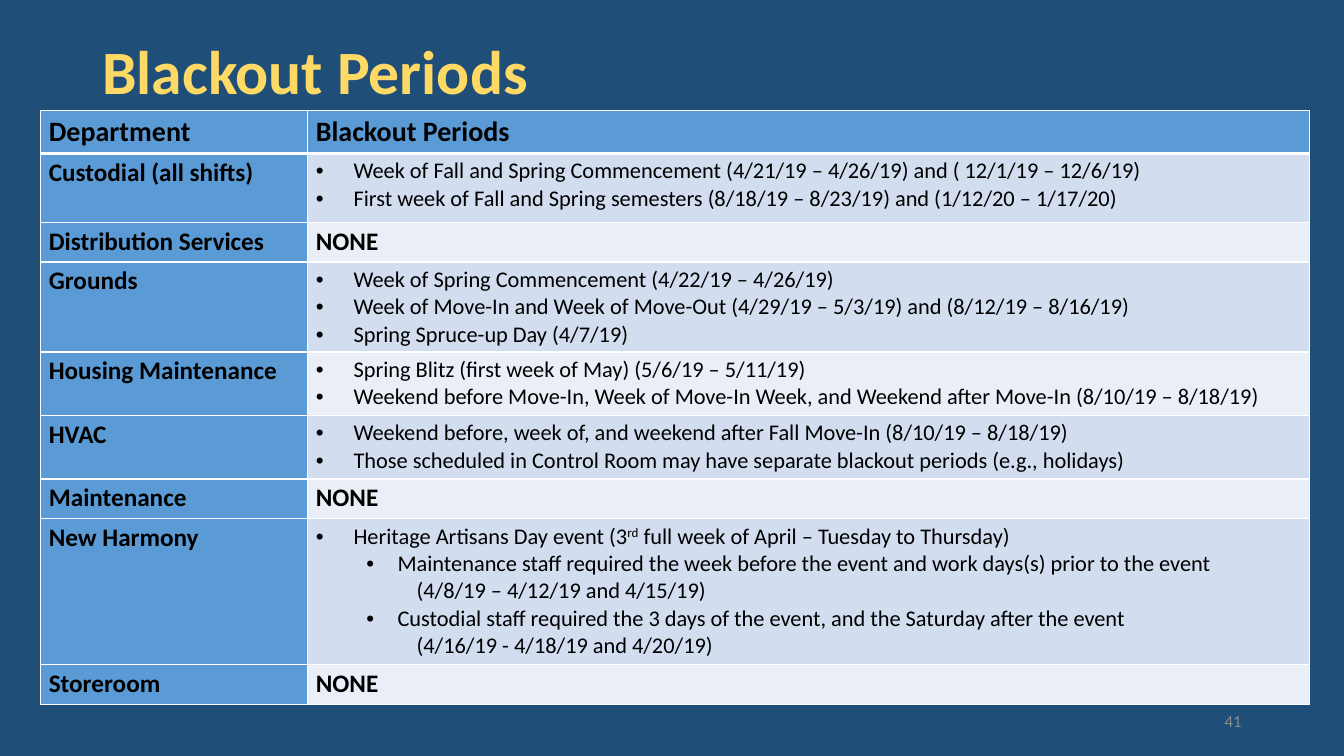
from dataclasses import dataclass

from lxml.etree import SubElement
from pptx import Presentation
from pptx.dml.color import RGBColor as RGB
from pptx.enum.text import MSO_ANCHOR as Anchor, PP_ALIGN as Align
from pptx.oxml import parse_xml
from pptx.oxml.ns import nsdecls, qn
from pptx.util import Cm, Pt


@dataclass(frozen=True)
class Theme:
    face: str = "Calibri"
    back: str = "1F4E79"
    title: str = "FFD966"
    ink: str = "000000"
    muted: str = "8C8C8C"
    key: str = "5B9BD5"
    bands: tuple = ("D2DEEF", "EAEFF7")
    rule: str = "FFFFFF"
    title_size: int = 44
    head_size: int = 20
    key_size: int = 18
    item_size: int = 16
    page_size: int = 12


THEME = Theme()

# Left margin and first-line indent, in cm, of each kind of line
INDENTS = {"item": (0.95, -0.95), "sub": (2.06, -0.79), "dates": (2.54, 0)}
NONE = [("none", "NONE")]

# Department, row height in cm, lines; ^ encloses superscript text
ROWS = [
    ("Custodial (all shifts)", 1.73, [
        ("item", "Week of Fall and Spring Commencement (4/21/19 – 4/26/19) and ( 12/1/19 – 12/6/19)"),
        ("item", "First week of Fall and Spring semesters (8/18/19 – 8/23/19) and (1/12/20 – 1/17/20)"),
    ]),
    ("Distribution Services", 1, NONE),
    ("Grounds", 2.27, [
        ("item", "Week of Spring Commencement (4/22/19 – 4/26/19)"),
        ("item", "Week of Move-In and Week of Move-Out (4/29/19 – 5/3/19) and (8/12/19 – 8/16/19)"),
        ("item", "Spring Spruce-up Day (4/7/19)"),
    ]),
    ("Housing Maintenance", 1.6, [
        ("item", "Spring Blitz (first week of May) (5/6/19 – 5/11/19)"),
        ("item", "Weekend before Move-In, Week of Move-In Week, and Weekend after Move-In (8/10/19 – 8/18/19)"),
    ]),
    ("HVAC", 1.6, [
        ("item", "Weekend before, week of, and weekend after Fall Move-In (8/10/19 – 8/18/19)"),
        ("item", "Those scheduled in Control Room may have separate blackout periods (e.g., holidays)"),
    ]),
    ("Maintenance", 1, NONE),
    ("New Harmony", 3.68, [
        ("item", "Heritage Artisans Day event (3^rd^ full week of April – Tuesday to Thursday)"),
        ("sub", "Maintenance staff required the week before the event and work days(s) prior to the event"),
        ("dates", "(4/8/19 – 4/12/19 and 4/15/19)"),
        ("sub", "Custodial staff required the 3 days of the event, and the Saturday after the event"),
        ("dates", "(4/16/19 - 4/18/19 and 4/20/19)"),
    ]),
    ("Storeroom", 1, NONE),
]


def style(para, size, color=THEME.ink, bold=False):
    font = para.font
    font.name, font.size, font.bold = THEME.face, Pt(size), bold
    font.color.rgb = RGB.from_string(color)


def add_label(slide, box, text, size, color, bold=False, align=Align.LEFT):
    frame = slide.shapes.add_textbox(*map(Cm, box)).text_frame
    frame.word_wrap = True
    frame.vertical_anchor = Anchor.MIDDLE
    para = frame.paragraphs[0]
    para.text, para.alignment = text, align
    style(para, size, color, bold)


def indent(para, kind):
    left, first = INDENTS[kind]
    props = para._p.get_or_add_pPr()
    props.set("marL", str(Cm(left)))
    props.set("indent", str(Cm(first)))
    if kind != "dates":
        SubElement(props, qn("a:buFont"), typeface="Arial")
        SubElement(props, qn("a:buChar"), char="•")


def write_line(para, kind, text):
    if kind in INDENTS:
        indent(para, kind)
    for i, part in enumerate(text.split("^")):
        run = para.add_run()
        run.text = part
        if i % 2:
            run._r.get_or_add_rPr().set("baseline", "30000")
    if kind == "head":
        style(para, THEME.head_size, bold=True)
    elif kind in ("key", "none"):
        style(para, THEME.key_size, bold=True)
    else:
        style(para, THEME.item_size)


def fill_cell(cell, lines, color, base=1):
    """Write the lines, fill the cell and rule its sides; base is the bottom rule in points."""
    cell.margin_left = cell.margin_right = Cm(0.21)
    cell.margin_top = cell.margin_bottom = Cm(0.1)
    frame = cell.text_frame
    for i, (kind, text) in enumerate(lines):
        para = frame.add_paragraph() if i else frame.paragraphs[0]
        write_line(para, kind, text)
    cell.fill.solid()
    cell.fill.fore_color.rgb = RGB.from_string(color)
    props = cell._tc.get_or_add_tcPr()
    for i, side in enumerate("LRTB"):
        width = Pt(base if side == "B" else 1)
        props.insert(i, parse_xml(
            f'<a:ln{side} {nsdecls("a")} w="{width}"><a:solidFill>'
            f'<a:srgbClr val="{THEME.rule}"/></a:solidFill></a:ln{side}>'))


def add_grid(slide, box, key_width, head_height):
    left, top, width = box
    heights = [head_height] + [height for _, height, _ in ROWS]
    table = slide.shapes.add_table(
        len(heights), 2, Cm(left), Cm(top), Cm(width), Cm(sum(heights))).table
    table.first_row = table.horz_banding = False
    for col, size in zip(table.columns, (key_width, width - key_width)):
        col.width = Cm(size)
    for row, height in zip(table.rows, heights):
        row.height = Cm(height)
    for i, text in enumerate(("Department", "Blackout Periods")):
        fill_cell(table.cell(0, i), [("head", text)], THEME.key, base=3)
    for i, (name, _, lines) in enumerate(ROWS):
        fill_cell(table.cell(i + 1, 0), [("key", name)], THEME.key)
        fill_cell(table.cell(i + 1, 1), lines, THEME.bands[i % 2])


def main():
    deck = Presentation()
    deck.slide_width, deck.slide_height = Cm(33.87), Cm(19.05)
    slide = deck.slides.add_slide(deck.slide_layouts[6])
    back = slide.background.fill
    back.solid()
    back.fore_color.rgb = RGB.from_string(THEME.back)
    add_label(slide, (2.33, -0.08, 29.21, 3.68), "Blackout Periods",
              THEME.title_size, THEME.title, bold=True)
    add_label(slide, (23.92, 17.66, 7.62, 1.01), "41",
              THEME.page_size, THEME.muted, align=Align.RIGHT)
    add_grid(slide, (1.02, 2.79, 31.98), key_width=6.73, head_height=1.08)
    deck.save("out.pptx")


if __name__ == "__main__":
    main()
